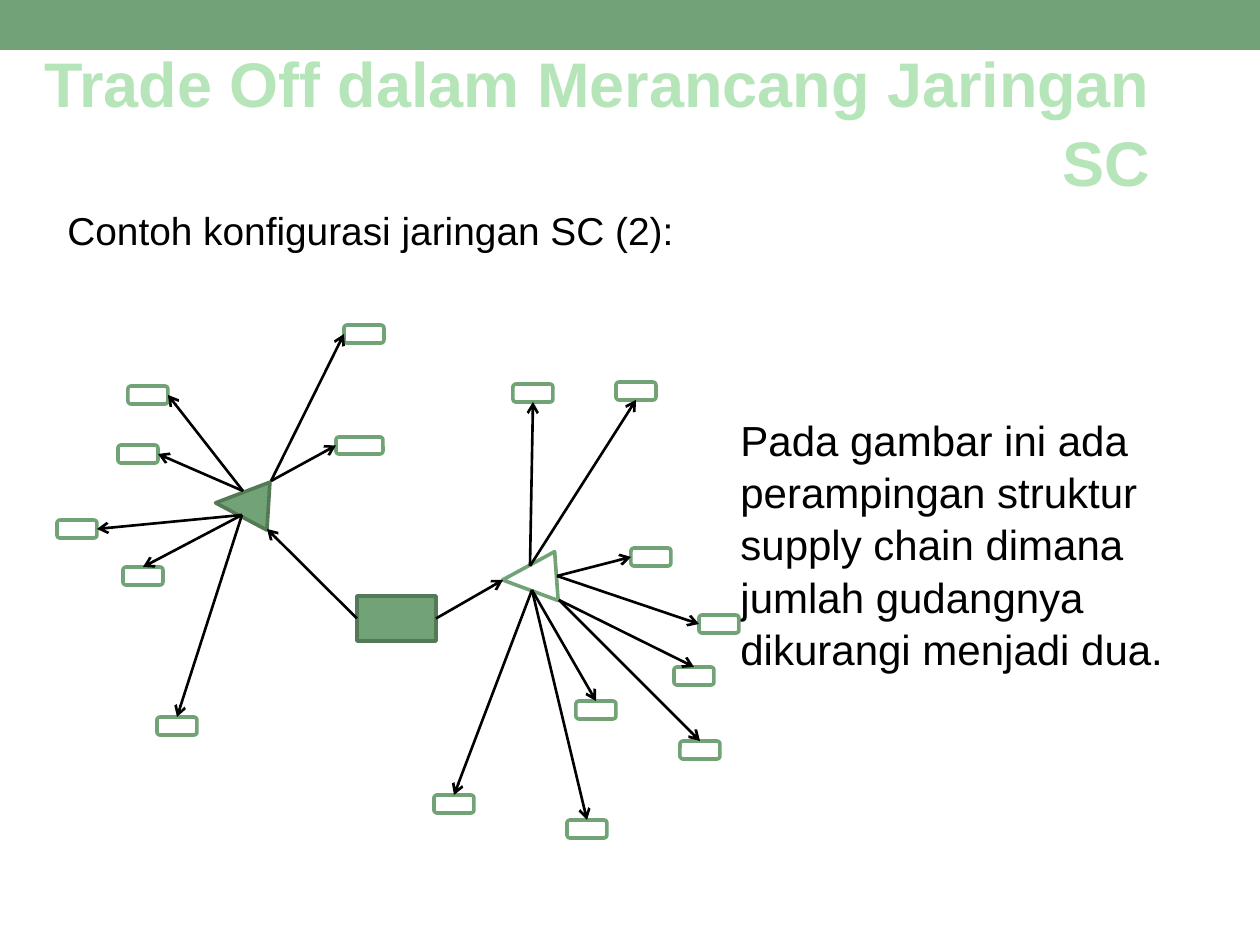
from pptx import Presentation
from pptx.dml.color import RGBColor
from pptx.enum.shapes import MSO_CONNECTOR as LINK, MSO_SHAPE as SHAPE
from pptx.enum.text import MSO_ANCHOR as ANCHOR, MSO_AUTO_SIZE as FIT, PP_ALIGN as ALIGN
from pptx.oxml.ns import qn
from pptx.util import Emu, Pt
from lxml.etree import SubElement

COLORS = {"green": "72A376", "dark": "547957", "pale": "B7E5BA",
          "white": "FFFFFF", "black": "000000"}
TOP, LEFT, BOTTOM, RIGHT = range(4)  # connection sites of a store
STORE_SIZE = (40, 18)

# Start point on a warehouse -> stores served: (left, top, side reached)
DELIVERIES = {
    (243, 491): [(128, 386, RIGHT), (118, 445, RIGHT)],
    (271, 481): [(344, 325, LEFT), (336, 437, LEFT, 47, 17)],
    (242, 515): [(123, 567, TOP), (57, 520, RIGHT), (157, 717, TOP)],
    (530, 566): [(513, 384, BOTTOM), (616, 382, BOTTOM)],
    (557, 576): [(631, 548, LEFT), (699, 615, LEFT)],
    (532, 590): [(576, 701, TOP), (567, 820, TOP), (434, 795, TOP)],
    (559, 600): [(674, 667, TOP), (680, 741, TOP)],
}


def px(length):
    return Emu(round(length * 914400 / 126))


def rgb(name):
    return RGBColor.from_string(COLORS[name])


class Deck:
    font = "Arial"

    def __init__(self):
        self.prs = Presentation()
        self.prs.slide_width, self.prs.slide_height = px(1260), px(945)
        self.slide = self.prs.slides.add_slide(self.prs.slide_layouts[5])

    def set_words(self, holder, words, size, color, spacing, bold=False, align=ALIGN.LEFT):
        frame = holder.text_frame
        frame.text = words
        frame.word_wrap, frame.auto_size = True, FIT.NONE
        para = frame.paragraphs[0]
        para.alignment, para.line_spacing = align, spacing
        para.font.name, para.font.size, para.font.bold = self.font, Pt(size), bold
        para.font.color.rgb = rgb(color)
        return para

    def title(self, words, *box):
        holder = self.slide.shapes.title
        holder.left, holder.top, holder.width, holder.height = map(px, box)
        self.set_words(holder, words, 36, "pale", 1.05, True, ALIGN.RIGHT)
        holder.text_frame.vertical_anchor = ANCHOR.MIDDLE

    def text(self, words, size, *box):
        holder = self.slide.shapes.add_textbox(*map(px, box))
        self.set_words(holder, words, size, "black", 1.04).space_before = Pt(2)

    def shape(self, kind, box, fill, line=None, rotation=0):
        shape = self.slide.shapes.add_shape(kind, *map(px, box))
        shape.shadow.inherit = False
        shape.rotation = rotation
        shape.fill.solid()
        shape.fill.fore_color.rgb = rgb(fill)
        if line:
            shape.line.color.rgb = rgb(line)
            shape.line.width = Pt(2.08)
        else:
            shape.line.fill.background()
        return shape

    def arrow(self, start, end):
        link = self.slide.shapes.add_connector(LINK.STRAIGHT, *map(px, start + end))
        link.line.color.rgb = rgb("black")
        link.line.width = Pt(1.5)
        SubElement(link.line._get_or_add_ln(), qn("a:tailEnd"), type="arrow")
        SubElement(link._element.spPr, qn("a:effectLst"))
        return link


def main():
    deck = Deck()
    deck.shape(SHAPE.RECTANGLE, (0, 0, 1260, 50), "green")
    deck.title("Trade Off dalam Merancang Jaringan SC", 0, 37, 1163, 166)
    deck.text("Pada gambar ini ada perampingan struktur supply chain dimana "
              "jumlah gudangnya dikurangi menjadi dua.", 24, 728, 406, 457, 328)
    deck.text("Contoh konfigurasi jaringan SC (2):", 22.2, 55, 199, 643, 66)

    deck.shape(SHAPE.ISOSCELES_TRIANGLE, (218, 478, 48, 53), "green", "dark", 273.5)
    deck.shape(SHAPE.ISOSCELES_TRIANGLE, (505, 551, 49, 54), "white", "green", 265.9)
    factory = deck.shape(SHAPE.RECTANGLE, (357, 596, 79, 45), "green", "dark")

    routes = []
    for start, stores in DELIVERIES.items():
        for left, top, side, *size in stores:
            box = (left, top, *(size or STORE_SIZE))
            store = deck.shape(SHAPE.FLOWCHART_ALTERNATE_PROCESS, box, "white", "green")
            routes.append((start, store, side))

    for start, store, side in routes:
        deck.arrow(start, start).end_connect(store, side)
    for side, warehouse in ((LEFT, (267, 529)), (RIGHT, (503, 580))):
        deck.arrow(warehouse, warehouse).begin_connect(factory, side)

    deck.prs.save("out.pptx")


if __name__ == "__main__":
    main()
